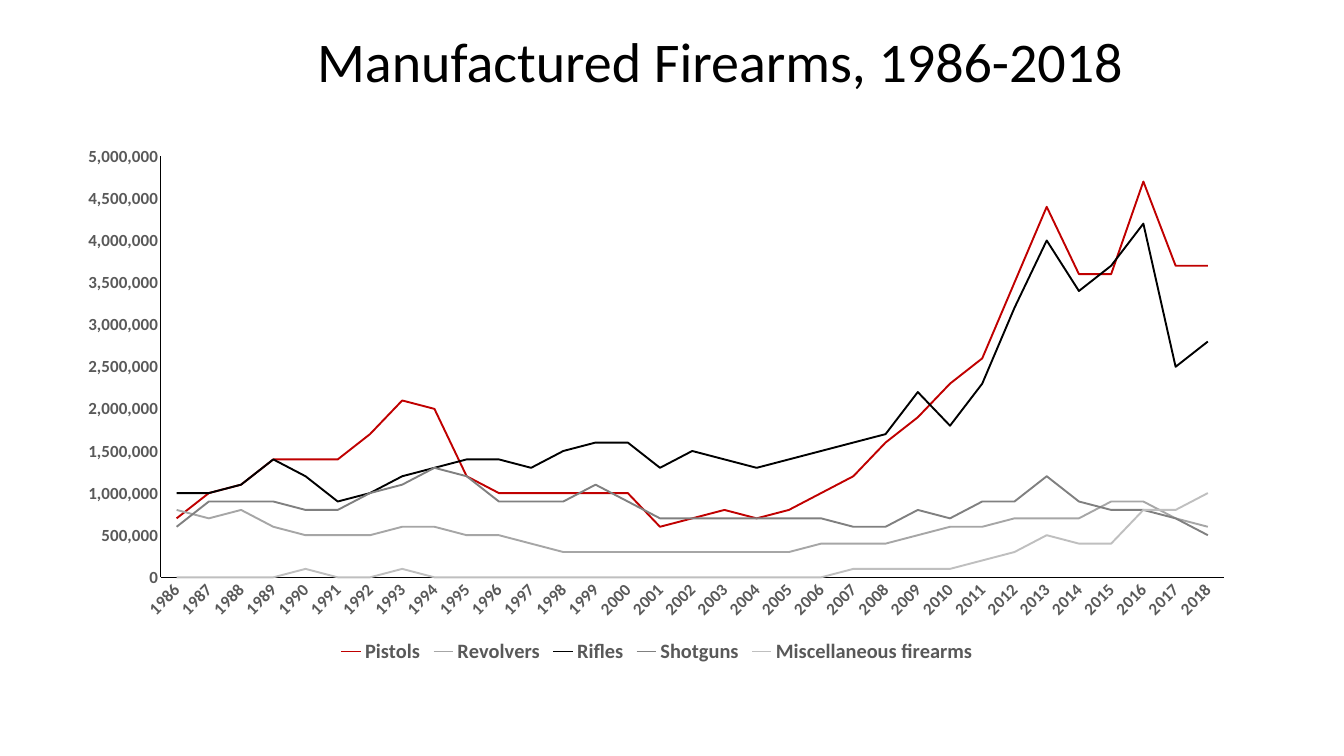
from dataclasses import dataclass

from lxml.etree import SubElement
from pptx import Presentation
from pptx.chart.data import CategoryChartData
from pptx.dml.color import RGBColor
from pptx.enum.chart import XL_CHART_TYPE as ChartType
from pptx.enum.chart import XL_LEGEND_POSITION as LegendPosition
from pptx.enum.chart import XL_MARKER_STYLE as MarkerStyle
from pptx.enum.chart import XL_TICK_MARK as TickMark
from pptx.enum.text import MSO_ANCHOR as Anchor
from pptx.enum.text import PP_ALIGN as Align
from pptx.oxml.ns import qn
from pptx.util import Pt


@dataclass(frozen=True)
class Theme:
    font: str = "Calibri"
    ink: str = "000000"
    label: str = "595959"
    title_size: float = 66
    legend_size: float = 24
    axis_size: float = 20
    chart_size: float = 10
    series_line: float = 2.25
    axis_line: float = 0.75


@dataclass(frozen=True)
class Firearm:
    name: str
    color: str
    counts: tuple[int, ...]  # hundred thousands made per year


THEME = Theme()
UNIT = 100_000
YEARS = range(1986, 2019)
FIREARMS = (
    Firearm("Pistols", "C00000", (
        7, 10, 11, 14, 14, 14, 17, 21, 20, 12, 10, 10, 10, 10, 10, 6, 7,
        8, 7, 8, 10, 12, 16, 19, 23, 26, 35, 44, 36, 36, 47, 37, 37)),
    Firearm("Revolvers", "A6A6A6", (
        8, 7, 8, 6, 5, 5, 5, 6, 6, 5, 5, 4, 3, 3, 3, 3, 3,
        3, 3, 3, 4, 4, 4, 5, 6, 6, 7, 7, 7, 9, 9, 7, 6)),
    Firearm("Rifles", "000000", (
        10, 10, 11, 14, 12, 9, 10, 12, 13, 14, 14, 13, 15, 16, 16, 13, 15,
        14, 13, 14, 15, 16, 17, 22, 18, 23, 32, 40, 34, 37, 42, 25, 28)),
    Firearm("Shotguns", "808080", (
        6, 9, 9, 9, 8, 8, 10, 11, 13, 12, 9, 9, 9, 11, 9, 7, 7,
        7, 7, 7, 7, 6, 6, 8, 7, 9, 9, 12, 9, 8, 8, 7, 5)),
    Firearm("Miscellaneous firearms", "BFBFBF", (
        0, 0, 0, 0, 1, 0, 0, 1, 0, 0, 0, 0, 0, 0, 0, 0, 0,
        0, 0, 0, 0, 1, 1, 1, 1, 2, 3, 5, 4, 4, 8, 8, 10)),
)


def set_font(font, size: float, color: str, bold: bool = False) -> None:
    font.name = THEME.font
    font.size = Pt(size)
    font.bold = bold
    font.color.rgb = RGBColor.from_string(color)


def set_line(line, color: str, width: float) -> None:
    line.color.rgb = RGBColor.from_string(color)
    line.width = Pt(width)


def style_axis(axis) -> None:
    axis.has_major_gridlines = False
    axis.major_tick_mark = axis.minor_tick_mark = TickMark.NONE
    set_font(axis.tick_labels.font, THEME.axis_size, THEME.label, bold=True)
    set_line(axis.format.line, THEME.ink, THEME.axis_line)


def place_plot(chart, **fractions: float) -> None:
    """Fix the inner plot area as fractions of the chart."""
    plot_area = chart._chartSpace.chart.plotArea
    for old in plot_area.findall(qn("c:layout")):
        plot_area.remove(old)
    layout = plot_area.makeelement(qn("c:layout"))
    plot_area.insert(0, layout)
    manual = SubElement(layout, qn("c:manualLayout"))
    settings = {"layoutTarget": "inner", "xMode": "edge", "yMode": "edge", **fractions}
    for tag, value in settings.items():
        SubElement(manual, qn(f"c:{tag}")).set("val", str(value))


def add_title(slide, text: str) -> None:
    box = slide.shapes.add_textbox(Pt(191.5), Pt(31), Pt(1314), Pt(80))
    frame = box.text_frame
    frame.word_wrap = True
    frame.vertical_anchor = Anchor.TOP
    frame.margin_left = frame.margin_right = frame.margin_top = frame.margin_bottom = 0
    para = frame.paragraphs[0]
    para.text = text
    para.alignment = Align.CENTER
    set_font(para.font, THEME.title_size, THEME.ink)


def add_firearms_chart(slide) -> None:
    data = CategoryChartData(number_format="#,##0")
    data.categories = [str(year) for year in YEARS]
    for firearm in FIREARMS:
        data.add_series(firearm.name, [count * UNIT for count in firearm.counts])
    chart = slide.shapes.add_chart(
        ChartType.LINE, Pt(77.75), Pt(159), Pt(1392), Pt(628), data).chart
    chart.has_title = False
    set_font(chart.font, THEME.chart_size, THEME.ink)
    place_plot(chart, x=0.08, y=0.04, w=0.9, h=0.79)

    # Axes
    years, totals = chart.category_axis, chart.value_axis
    style_axis(years)
    style_axis(totals)
    years._element.txPr.bodyPr.set("rot", "-2700000")
    totals.minimum_scale, totals.maximum_scale = 0, 50 * UNIT
    totals.major_unit = 5 * UNIT
    totals.tick_labels.number_format = "#,##0"
    totals.tick_labels.number_format_is_linked = False

    # Legend
    chart.has_legend = True
    chart.legend.position = LegendPosition.BOTTOM
    chart.legend.include_in_layout = False
    set_font(chart.legend.font, THEME.legend_size, THEME.label, bold=True)

    # Series lines
    plot = chart.plots[0]
    plot.vary_by_categories = False
    for series, firearm in zip(plot.series, FIREARMS):
        series.smooth = False
        series.marker.style = MarkerStyle.NONE
        set_line(series.format.line, firearm.color, THEME.series_line)


def main() -> None:
    deck = Presentation()
    deck.slide_width, deck.slide_height = Pt(1583.25), Pt(890.65)
    page = deck.slides.add_slide(deck.slide_layouts[6])
    add_title(page, "Manufactured Firearms, 1986-2018")
    add_firearms_chart(page)
    deck.save("out.pptx")


if __name__ == "__main__":
    main()
